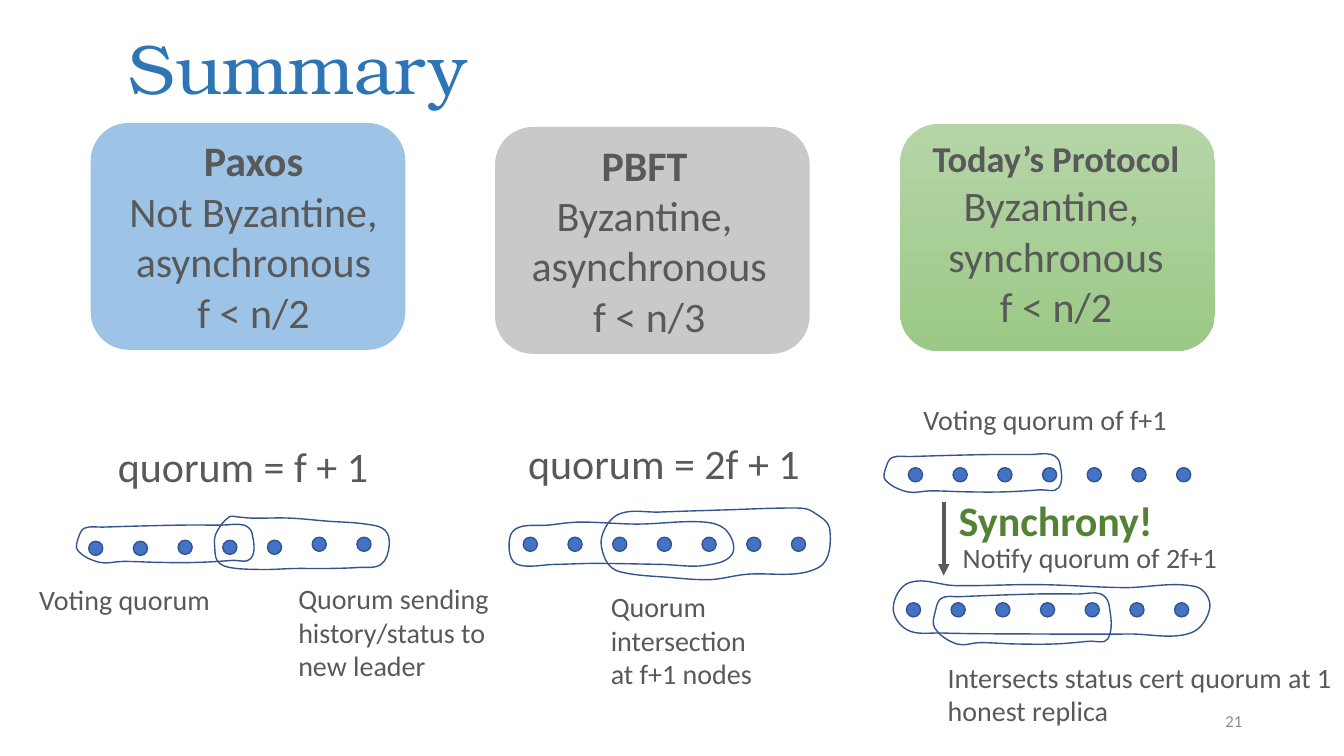
import math

import pptx
import pptx.dml.color
import pptx.enum.shapes
import pptx.enum.text
import pptx.oxml
import pptx.oxml.ns
import pptx.util

Inches = pptx.util.Inches
Pt = pptx.util.Pt
SHAPE = pptx.enum.shapes.MSO_SHAPE
ALIGN = pptx.enum.text.PP_ALIGN
ANCHOR = pptx.enum.text.MSO_ANCHOR
NS = pptx.oxml.ns.nsdecls("a")

COLORS = {
    "title": "2E75B6", "text": "595959", "sync": "548235", "number": "8C8C8C",
    "dot": "4472C4", "outline": "325491", "paxos": "9DC3E6", "pbft": "C9C9C9",
    "green_top": "B5D5A7", "green_bottom": "9CC987",
}

# Quorum outlines: points in inches from the top left of each outline
VOTING = [(1.75, .09), (1.67, .01), (1.45, .01), (1.04, .01), (.27, .03), (.09, .04), (.03, .13),
          (.02, .26), (.24, .38), (.47, .37), (.82, .38), (1.21, .38), (1.55, .36), (1.74, .34)]
STATUS = [(.15, .01), (.02, .18), (.01, .31), (.04, .45), (.16, .51), (.48, .53), (.8, .52),
          (1.14, .52), (1.43, .51), (1.66, .48), (1.74, .3), (1.7, .14), (1.51, .08),
          (1.12, .05), (.75, .02), (.37, .02), (.25, .01)]
NOTIFY = [(3.14, .25), (3, .05), (2.28, .06), (1.44, .03), (.62, .04), (.16, .01), (0, .26),
          (.14, .48), (.47, .51), (1.47, .52), (2.35, .52), (2.95, .51)]
PBFT_LEFT = [(2.16, .09), (1.94, 0), (1.27, .02), (.7, 0), (.39, .03), (.06, .07), (0, .27),
             (.08, .42), (.45, .42), (.85, .41), (1.51, .42), (1.94, .43), (2.21, .32)]
PBFT_RIGHT = [(1.95, 0), (1.19, .02), (.58, .04), (.18, .06), (.01, .28), (.05, .52), (.18, .63),
              (.7, .69), (1.09, .71), (1.42, .66), (2.16, .59), (2.27, .21), (2.09, .03)]


def rgb(name):
    return pptx.dml.color.RGBColor.from_string(COLORS[name])


def add_text(s, x, y, w, h, lines, size=20, color="text", bold=False, font="Calibri",
             align=ALIGN.LEFT, anchor=ANCHOR.TOP, spacing=None):
    """Each line is a string or a (string, size, bold) tuple."""
    tf = s.shapes.add_textbox(Inches(x), Inches(y), Inches(w), Inches(h)).text_frame
    tf.word_wrap = True
    tf.vertical_anchor = anchor
    for i, line in enumerate(lines):
        text, pt, strong = line if isinstance(line, tuple) else (line, size, bold)
        p = tf.paragraphs[0] if i == 0 else tf.add_paragraph()
        p.alignment = align
        if spacing:
            p.line_spacing = spacing
        r = p.add_run()
        r.text = text
        r.font.name = font
        r.font.size = Pt(pt)
        r.font.bold = strong
        r.font.color.rgb = rgb(color)


def bend_segments(sp, points):
    """Turn the straight segments of a closed freeform into smooth cubic curves."""
    n = len(points)
    left, top = (min(axis) for axis in zip(*points))
    tangents = []
    for i in range(n):
        (ax, ay), (bx, by) = points[i - 1], points[(i + 1) % n]
        length = math.hypot(bx - ax, by - ay)
        tangents.append(((bx - ax) / length, (by - ay) / length))
    segments = list(sp._element.iter(pptx.oxml.ns.qn("a:lnTo")))
    for i, segment in enumerate(segments):
        j = (i + 1) % n
        (ax, ay), (bx, by) = points[i], points[j]
        (ux, uy), (vx, vy) = tangents[i], tangents[j]
        handle = math.dist(points[i], points[j]) / 3
        knots = [(ax + handle * ux, ay + handle * uy), (bx - handle * vx, by - handle * vy), (bx, by)]
        pts = "".join(f'<a:pt x="{round(px - left)}" y="{round(py - top)}"/>' for px, py in knots)
        curve = pptx.oxml.parse_xml(f"<a:cubicBezTo {NS}>{pts}</a:cubicBezTo>")
        segment.getparent().replace(segment, curve)


def add_quorum(s, x, y, outline, stretch=1):
    points = [(round((x + px) * 1000), round((y + py * stretch) * 1000)) for px, py in outline]
    fb = s.shapes.build_freeform(*points[0], scale=Inches(1) / 1000)
    fb.add_line_segments(points[1:] + points[:1], close=True)
    sp = fb.convert_to_shape()
    bend_segments(sp, points)
    sp.shadow.inherit = False
    sp.fill.background()
    sp.line.color.rgb = rgb("outline")
    sp.line.width = Pt(1)


def add_replicas(s, x, y, drops=(0,) * 7, span=2.66, d=0.14):
    row = s.shapes.add_group_shape()
    pitch = span / (len(drops) - 1)
    for i, drop in enumerate(drops):
        sp = row.shapes.add_shape(SHAPE.OVAL, Inches(x + i * pitch), Inches(y + drop),
                                  Inches(d), Inches(d))
        sp.shadow.inherit = False
        sp.fill.solid()
        sp.fill.fore_color.rgb = rgb("dot")
        sp.line.color.rgb = rgb("outline")
        sp.line.width = Pt(1)


def add_card(s, x, y, fills, text_box, lines):
    """Rounded card; text_box is dx, dy, width, height from the card corner."""
    sp = s.shapes.add_shape(SHAPE.ROUNDED_RECTANGLE, Inches(x), Inches(y),
                            Inches(3.12), Inches(2.25))
    sp.shadow.inherit = False
    sp.line.fill.background()
    if len(fills) == 1:
        sp.fill.solid()
        sp.fill.fore_color.rgb = rgb(fills[0])
    else:
        sp.fill.gradient()
        sp.fill.gradient_angle = 270
        for i, (stop, name) in enumerate(zip(sp.fill.gradient_stops, fills)):
            stop.color.rgb = rgb(name)
            stop.position = i
    dx, dy, w, h = text_box
    add_text(s, x + dx, y + dy, w, h, lines, size=30, align=ALIGN.CENTER)


def add_arrow(s, x, y, length):
    c = s.shapes.add_connector(pptx.enum.shapes.MSO_CONNECTOR.STRAIGHT,
                               Inches(x), Inches(y), Inches(x), Inches(y + length))
    c.line.color.rgb = rgb("text")
    c.line.width = Pt(2.75)
    c.line._get_or_add_ln().append(pptx.oxml.parse_xml(f'<a:tailEnd {NS} type="triangle"/>'))
    c._element.spPr.append(pptx.oxml.parse_xml(f"<a:effectLst {NS}/>"))


def paxos_column(s, x, y):
    add_card(s, x, y, ["paxos"], (0.25, 0.07, 2.73, 2.12),
             [("Paxos", 30, True), "Not Byzantine, ", "asynchronous", "f < n/2"])
    add_text(s, x + 0.17, y + 3.1, 3.44, 0.61, ["quorum = f + 1"], size=30)
    add_replicas(s, x - 0.02, y + 4.11, (0.04, 0.04, 0.03, 0.03, 0.03, 0, 0))
    add_quorum(s, x - 0.15, y + 3.98, VOTING)
    add_quorum(s, x + 1.22, y + 3.9, STATUS)
    add_text(s, x - 0.61, y + 4.51, 1.97, 0.44, ["Voting quorum"])
    add_text(s, x + 1.96, y + 4.5, 2.19, 1.11, ["Quorum sending history/status to new leader"])


def pbft_column(s, x, y):
    add_card(s, x, y, ["pbft"], (0.24, 0.07, 2.58, 2.12),
             [("PBFT ", 30, True), "Byzantine, ", "asynchronous", "f < n/3"])
    add_text(s, x + 0.23, y + 3.03, 3.44, 0.61, ["quorum = 2f + 1"], size=30)
    add_replicas(s, x + 0.28, y + 4.07)
    add_quorum(s, x + 0.14, y + 3.92, PBFT_LEFT)
    add_quorum(s, x + 1.05, y + 3.78, PBFT_RIGHT)
    add_text(s, x + 1.05, y + 4.54, 1.67, 1.11, ["Quorum intersection", "at f+1 nodes"])


def today_column(s, x, y):
    add_card(s, x, y, ["green_top", "green_bottom"], (0.21, 0.07, 2.67, 2.05),
             [("Today’s Protocol ", 26, True), "Byzantine, ", "synchronous", "f < n/2"])
    # Voting round
    add_text(s, x + 0.13, y + 2.71, 3.52, 0.44, ["Voting quorum of f+1"])
    add_quorum(s, x - 0.17, y + 3.27, VOTING)
    add_replicas(s, x + 0.08, y + 3.41)
    # Synchronous notification
    add_arrow(s, x + 0.43, y + 3.75, 0.73)
    add_text(s, x + 0.48, y + 3.63, 3.52, 0.61, ["Synchrony!"], size=30, color="sync", bold=True)
    add_text(s, x + 0.52, y + 4.08, 3.52, 0.44, ["Notify quorum of 2f+1"])
    # Intersecting quorums
    add_replicas(s, x + 0.06, y + 4.75)
    add_quorum(s, x - 0.07, y + 4.54, NOTIFY)
    add_quorum(s, x + 0.32, y + 4.65, VOTING, stretch=1.34)
    add_text(s, x + 0.37, y + 5.27, 4.65, 0.77,
             ["Intersects status cert quorum at 1 honest replica"])


def main():
    prs = pptx.Presentation()
    prs.slide_width, prs.slide_height = Inches(13.33), Inches(7.5)
    s = prs.slides.add_slide(prs.slide_layouts[6])
    # Title and slide number
    add_text(s, 1.18, 0.29, 9.74, 1.25, ["Summary"], size=50, color="title",
             font="TeX Gyre Bonum", spacing=0.9)
    add_text(s, 9.42, 6.95, 3, 0.4, ["21"], size=12, color="number",
             align=ALIGN.RIGHT, anchor=ANCHOR.MIDDLE)
    # Protocol columns
    paxos_column(s, 0.9, 1.22)
    pbft_column(s, 4.91, 1.26)
    today_column(s, 8.93, 1.23)
    prs.save("out.pptx")


if __name__ == "__main__":
    main()
